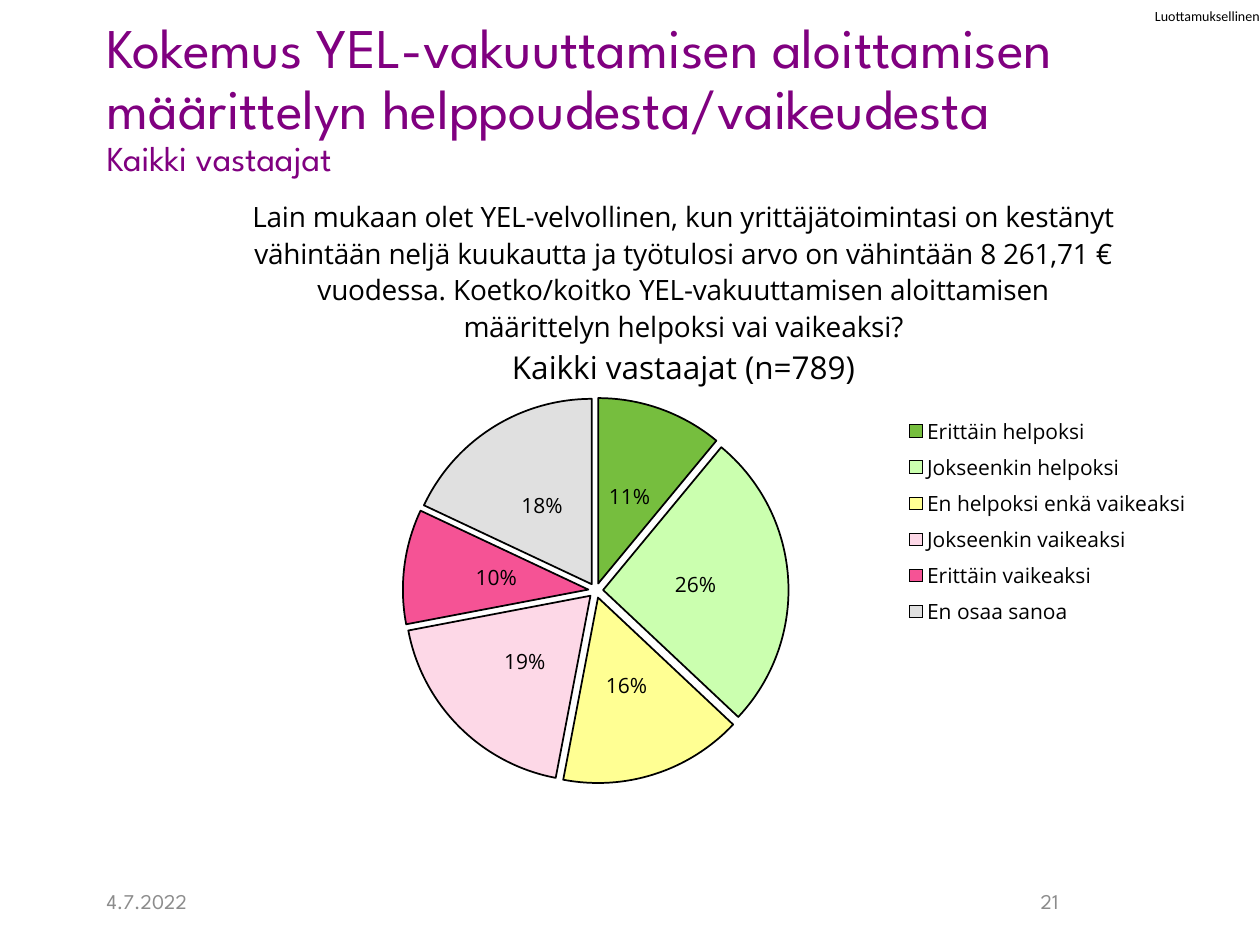
from dataclasses import dataclass

from lxml.etree import SubElement
from pptx import Presentation
from pptx.chart.data import CategoryChartData
from pptx.dml.color import RGBColor
from pptx.enum.chart import XL_CHART_TYPE, XL_LABEL_POSITION, XL_LEGEND_POSITION
from pptx.enum.text import MSO_ANCHOR, PP_ALIGN
from pptx.oxml import parse_xml
from pptx.oxml.ns import nsdecls, qn
from pptx.util import Cm, Pt


@dataclass(frozen=True)
class Theme:
    head: str = "League Spartan"
    body: str = "Open Sans"
    mark: str = "Calibri"
    purple: str = "800080"
    gray: str = "8C8C8C"
    black: str = "000000"
    tiny: int = 8
    small: int = 12
    ask: int = 16
    base: int = 18
    sub: int = 20
    big: int = 32
    alpha: int = 80000


THEME = Theme()

ANSWERS = [
    ("Erittäin helpoksi", 0.11, "54AE0E"),
    ("Jokseenkin helpoksi", 0.26, "BFFF9B"),
    ("En helpoksi enkä vaikeaksi", 0.16, "FFFF79"),
    ("Jokseenkin vaikeaksi", 0.19, "FDCFE1"),
    ("Erittäin vaikeaksi", 0.10, "F3297B"),
    ("En osaa sanoa", 0.18, "D9D9D9"),
]

QUESTION = (
    "Lain mukaan olet YEL-velvollinen, kun yrittäjätoimintasi on kestänyt "
    "vähintään neljä kuukautta ja työtulosi arvo on vähintään 8 261,71 € "
    "vuodessa. Koetko/koitko YEL-vakuuttamisen aloittamisen "
    "määrittelyn helpoksi vai vaikeaksi?"
)


def apply(item, values):
    for key, value in values.items():
        setattr(item, key, value)


def set_font(font, name, size, color):
    apply(font, {"name": name, "size": Pt(size), "bold": False})
    font.color.rgb = RGBColor.from_string(color)


def add_text(slide, box, lines, name, color, frame=None, para=None):
    """Add one paragraph; lines are (text, size) pairs parted by line breaks."""
    shape = slide.shapes.add_textbox(*map(Cm, box))
    text = shape.text_frame
    apply(text, {"word_wrap": True, "vertical_anchor": MSO_ANCHOR.MIDDLE, **(frame or {})})
    first = text.paragraphs[0]
    apply(first, para or {})
    for i, (words, size) in enumerate(lines):
        if i:
            first.add_line_break()
        run = first.add_run()
        run.text = words
        set_font(run.font, name, size, color)


def place(part, x, y, w=None, h=None, inner=False):
    """Give a chart part a fixed place, in shares of the chart."""
    node = part.find(qn("c:layout"))
    if node is not None:
        part.remove(node)
    pairs = [("layoutTarget", "inner")] if inner else []
    pairs += [("xMode", "edge"), ("yMode", "edge"), ("x", x), ("y", y)]
    if w is not None:
        pairs += [("w", w), ("h", h)]
    body = "".join(f'<c:{tag} val="{value}"/>' for tag, value in pairs)
    node = parse_xml(
        f'<c:layout {nsdecls("c")}><c:manualLayout>{body}</c:manualLayout></c:layout>'
    )
    before = {qn("c:tx"), qn("c:legendPos")}
    spot = sum(child.tag in before for child in part)
    part.insert(spot, node)


def add_title(chart):
    text = chart.chart_title.text_frame
    lines = [(QUESTION, THEME.ask), ("Kaikki vastaajat (n=789)", THEME.base)]
    for i, (words, size) in enumerate(lines):
        para = text.add_paragraph() if i else text.paragraphs[0]
        run = para.add_run()
        run.text = words
        set_font(run.font, THEME.body, size, THEME.black)
    chart.chart_title.include_in_layout = False
    place(chart.chart_title._element, 0.14, 0.01)


def paint(series):
    for i, (_, _, color) in enumerate(ANSWERS):
        form = series.points[i].format
        form.fill.solid()
        form.fill.fore_color.rgb = RGBColor.from_string(color)
        tone = form.fill._xPr.find(".//" + qn("a:srgbClr"))
        SubElement(tone, qn("a:alpha"), val=str(THEME.alpha))
        form.line.color.rgb = RGBColor.from_string(THEME.black)
        form.line.width = Pt(1)
    burst = parse_xml(f'<c:explosion {nsdecls("c")} val="4"/>')
    series._element.find(qn("c:dPt")).addprevious(burst)


def add_pie(slide, box):
    data = CategoryChartData(number_format="0%")
    data.categories = [name for name, _, _ in ANSWERS]
    data.add_series("Vastaajat", [share for _, share, _ in ANSWERS])
    chart = slide.shapes.add_chart(XL_CHART_TYPE.PIE, *map(Cm, box), data).chart
    set_font(chart.font, THEME.body, THEME.small, THEME.black)
    add_title(chart)

    chart.has_legend = True
    apply(chart.legend, {"position": XL_LEGEND_POSITION.RIGHT, "include_in_layout": False})
    set_font(chart.legend.font, THEME.body, THEME.small, THEME.black)
    place(chart.legend._element, 0.73, 0.34, 0.27, 0.34)

    plot = chart.plots[0]
    apply(plot, {"vary_by_categories": True, "has_data_labels": True})
    apply(plot.data_labels, {
        "show_value": True,
        "show_percentage": False,
        "number_format": "0%",
        "number_format_is_linked": False,
        "position": XL_LABEL_POSITION.CENTER,
    })
    set_font(plot.data_labels.font, THEME.body, THEME.small, THEME.black)
    paint(plot.series[0])
    place(chart._chartSpace.chart.plotArea, 0.28, 0.32, 0.35, 0.59, inner=True)


def main():
    deck = Presentation()
    apply(deck, {"slide_width": Cm(25.4), "slide_height": Cm(19.05)})
    slide = deck.slides.add_slide(deck.slide_layouts[6])

    sides = ("left", "top", "right", "bottom")
    flush = {f"margin_{side}": 0 for side in sides}
    add_text(slide, (22.58, 0, 2.82, 0.64), [("Luottamuksellinen", THEME.tiny)],
             THEME.mark, THEME.black, flush, {"alignment": PP_ALIGN.RIGHT})
    title = [
        ("Kokemus YEL-vakuuttamisen aloittamisen määrittelyn helppoudesta/vaikeudesta",
         THEME.big),
        ("Kaikki vastaajat", THEME.sub),
    ]
    add_text(slide, (1.9, 1, 22.22, 2.74), title, THEME.head, THEME.purple,
             {"vertical_anchor": MSO_ANCHOR.BOTTOM}, {"line_spacing": 0.9})
    add_pie(slide, (1.9, 3.74, 22.22, 13.28))
    add_text(slide, (1.9, 17.65, 5.3, 1.02), [("4.7.2022", THEME.small)],
             THEME.head, THEME.gray)
    add_text(slide, (18.2, 17.65, 5.92, 1.02), [("21", THEME.small)],
             THEME.head, THEME.gray, para={"alignment": PP_ALIGN.CENTER})
    deck.save("out.pptx")


if __name__ == "__main__":
    main()
